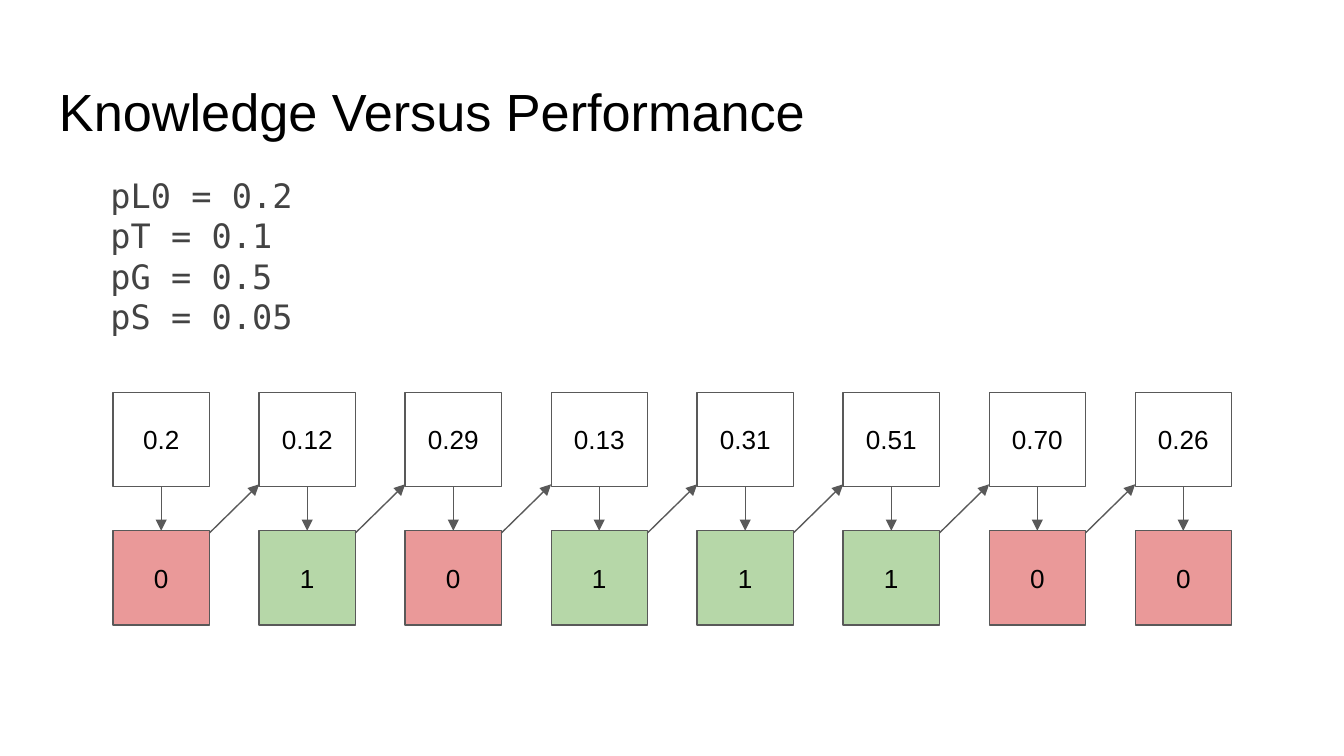
from dataclasses import dataclass

from lxml import etree
from pptx import Presentation
from pptx import util as u
from pptx.dml.color import RGBColor
from pptx.enum import shapes, text
from pptx.oxml.ns import qn


@dataclass(frozen=True)
class Theme:
    sans: str = "Arial"
    mono: str = "DejaVu Sans Mono"
    ink: str = "000000"
    code: str = "434343"
    line: str = "595959"
    paper: str = "FFFFFF"
    wrong: str = "EA9999"
    right: str = "B6D7A8"
    title_size: int = 28
    code_size: int = 18
    box_size: int = 14
    line_width: float = 0.75


THEME = Theme()
WIDTH = 10
HEIGHT = WIDTH * 9 / 16
INSET = 0.1

# The slide is measured in hundredths of its width and height
COLUMN, ROW = WIDTH / 100, HEIGHT / 100

PARAMETERS = ["pL0 = 0.2", "pT = 0.1", "pG = 0.5", "pS = 0.05"]
# Estimated knowledge and observed answer at each step
STEPS = [("0.2", 0), ("0.12", 1), ("0.29", 0), ("0.13", 1),
         ("0.31", 1), ("0.51", 1), ("0.70", 0), ("0.26", 0)]


def set_attributes(target, values):
    for name, value in values.items():
        setattr(target, name, value)


def grid_box(left, top, width, height):
    return left * COLUMN, top * ROW, width * COLUMN, height * ROW


def write(shape, lines, font, size, color, anchor, align):
    frame = shape.text_frame
    sides = ("margin_left", "margin_right", "margin_top", "margin_bottom")
    set_attributes(frame, dict.fromkeys(sides, u.Inches(INSET)))
    set_attributes(frame, {"word_wrap": True, "vertical_anchor": anchor})
    frame.text = "\n".join(lines)
    for paragraph in frame.paragraphs:
        paragraph.alignment = align
        set_attributes(paragraph.font, {"name": font, "size": u.Pt(size)})
        paragraph.font.color.rgb = RGBColor.from_string(color)


def set_line(line):
    line.color.rgb = RGBColor.from_string(THEME.line)
    line.width = u.Pt(THEME.line_width)


def add_text(slide, box, lines, *style):
    shape = slide.shapes.add_textbox(*map(u.Inches, box))
    write(shape, lines, *style)


def add_box(slide, box, label, fill):
    shape = slide.shapes.add_shape(shapes.MSO_SHAPE.RECTANGLE, *map(u.Inches, box))
    shape.shadow.inherit = False
    shape.fill.solid()
    shape.fill.fore_color.rgb = RGBColor.from_string(fill)
    set_line(shape.line)
    write(shape, [label], THEME.sans, THEME.box_size, THEME.ink,
          text.MSO_ANCHOR.MIDDLE, text.PP_ALIGN.CENTER)


def add_arrow(slide, start, end):
    arrow = slide.shapes.add_connector(
        shapes.MSO_CONNECTOR.STRAIGHT, *map(u.Inches, (*start, *end)))
    set_line(arrow.line)
    properties = arrow._element.spPr
    etree.SubElement(properties.find(qn("a:ln")), qn("a:tailEnd"), type="triangle")
    etree.SubElement(properties, qn("a:effectLst"))


def add_title(slide, box):
    add_text(slide, box, ["Knowledge Versus Performance"], THEME.sans,
             THEME.title_size, THEME.ink, text.MSO_ANCHOR.TOP, text.PP_ALIGN.LEFT)


def add_parameters(slide, box):
    add_text(slide, box, PARAMETERS, THEME.mono, THEME.code_size, THEME.code,
             text.MSO_ANCHOR.MIDDLE, text.PP_ALIGN.LEFT)


def add_step_grid(slide, box):
    """Two rows of boxes: knowledge above, performance below."""
    left, top, width, height = box
    box_width = width * 0.086
    box_height = height * 0.405
    pitch = (width - box_width) / (len(STEPS) - 1)
    upper_bottom = top + box_height
    lower_top = top + height - box_height
    overlap = height * 0.01
    answer_fills = (THEME.wrong, THEME.right)

    # Boxes
    for column, (knowledge, answer) in enumerate(STEPS):
        x = left + column * pitch
        add_box(slide, (x, top, box_width, box_height), knowledge, THEME.paper)
        add_box(slide, (x, lower_top, box_width, box_height),
                str(answer), answer_fills[answer])

    # Arrows down to each answer, then up to the next estimate
    for column in range(len(STEPS)):
        x = left + column * pitch
        middle = x + box_width / 2
        add_arrow(slide, (middle, upper_bottom), (middle, lower_top))
        if column < len(STEPS) - 1:
            add_arrow(slide, (x + box_width, lower_top + overlap),
                      (x + pitch, upper_bottom - overlap))


def main():
    presentation = Presentation()
    set_attributes(presentation, {
        "slide_width": u.Inches(WIDTH), "slide_height": u.Inches(HEIGHT)})
    slide = presentation.slides.add_slide(presentation.slide_layouts[6])
    add_title(slide, grid_box(3.41, 8.65, 93.18, 11.13))
    add_step_grid(slide, grid_box(8.42, 51.9, 83.2, 30.78))
    add_parameters(slide, grid_box(7.24, 21, 57.4, 25.6))
    presentation.save("out.pptx")


if __name__ == "__main__":
    main()
